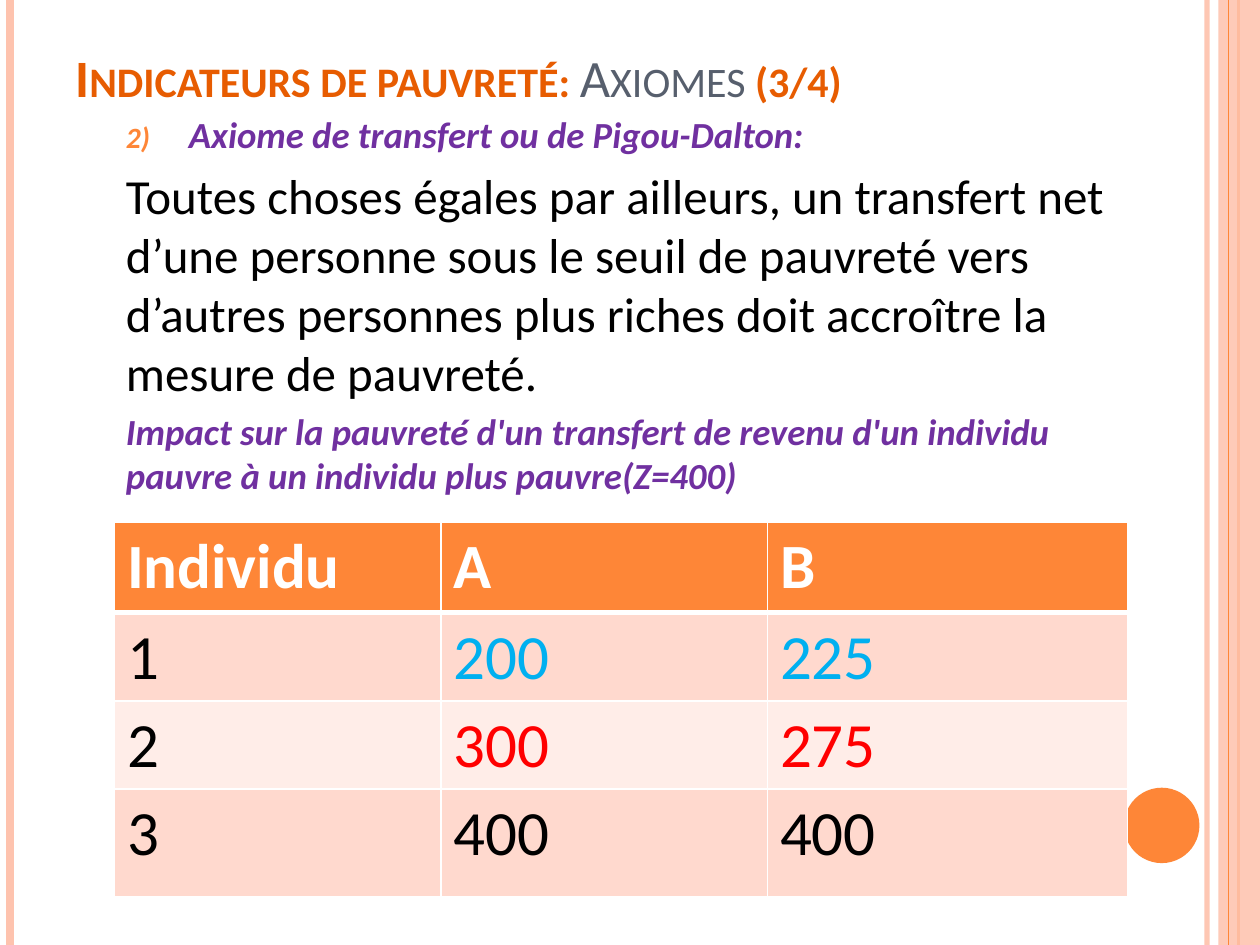
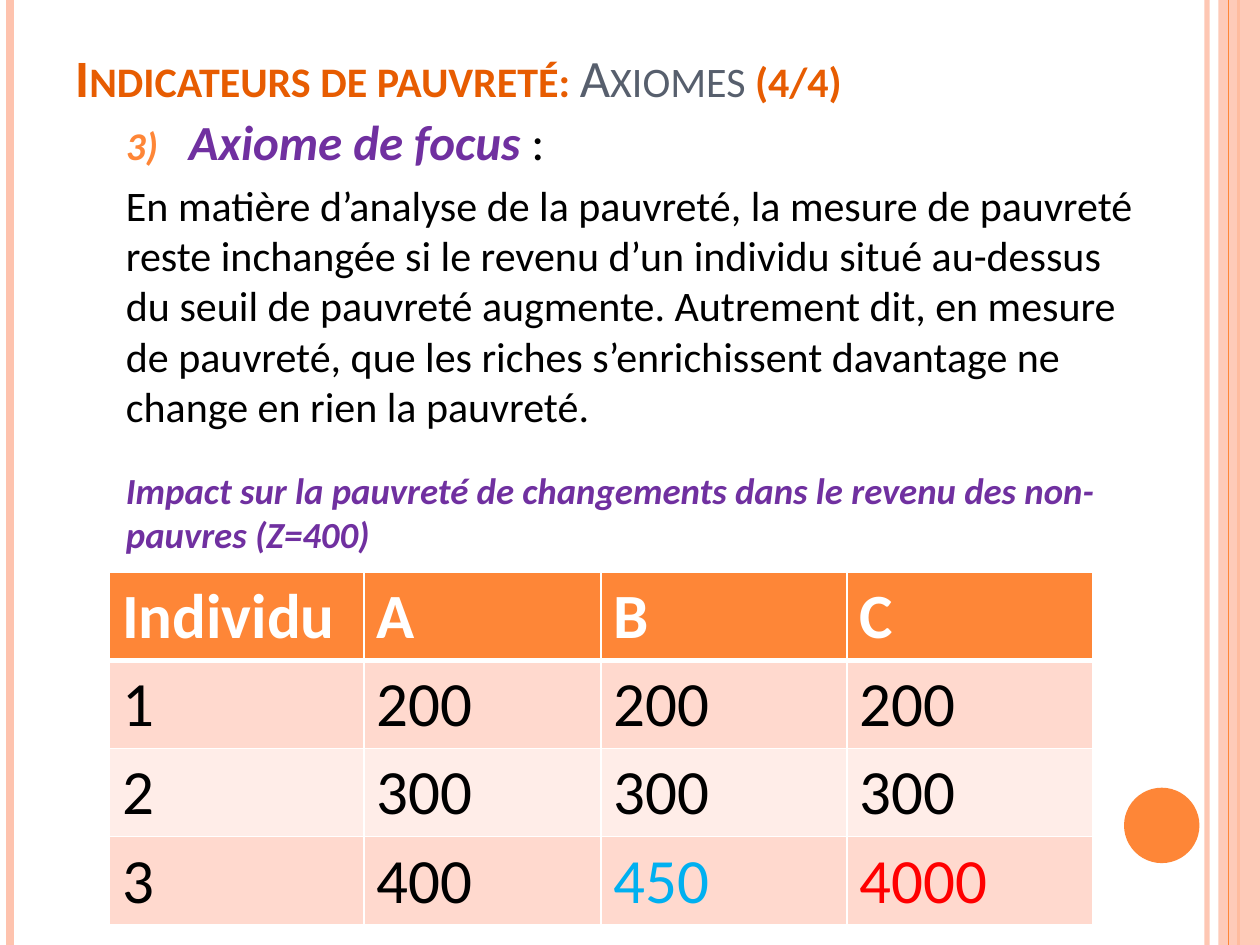
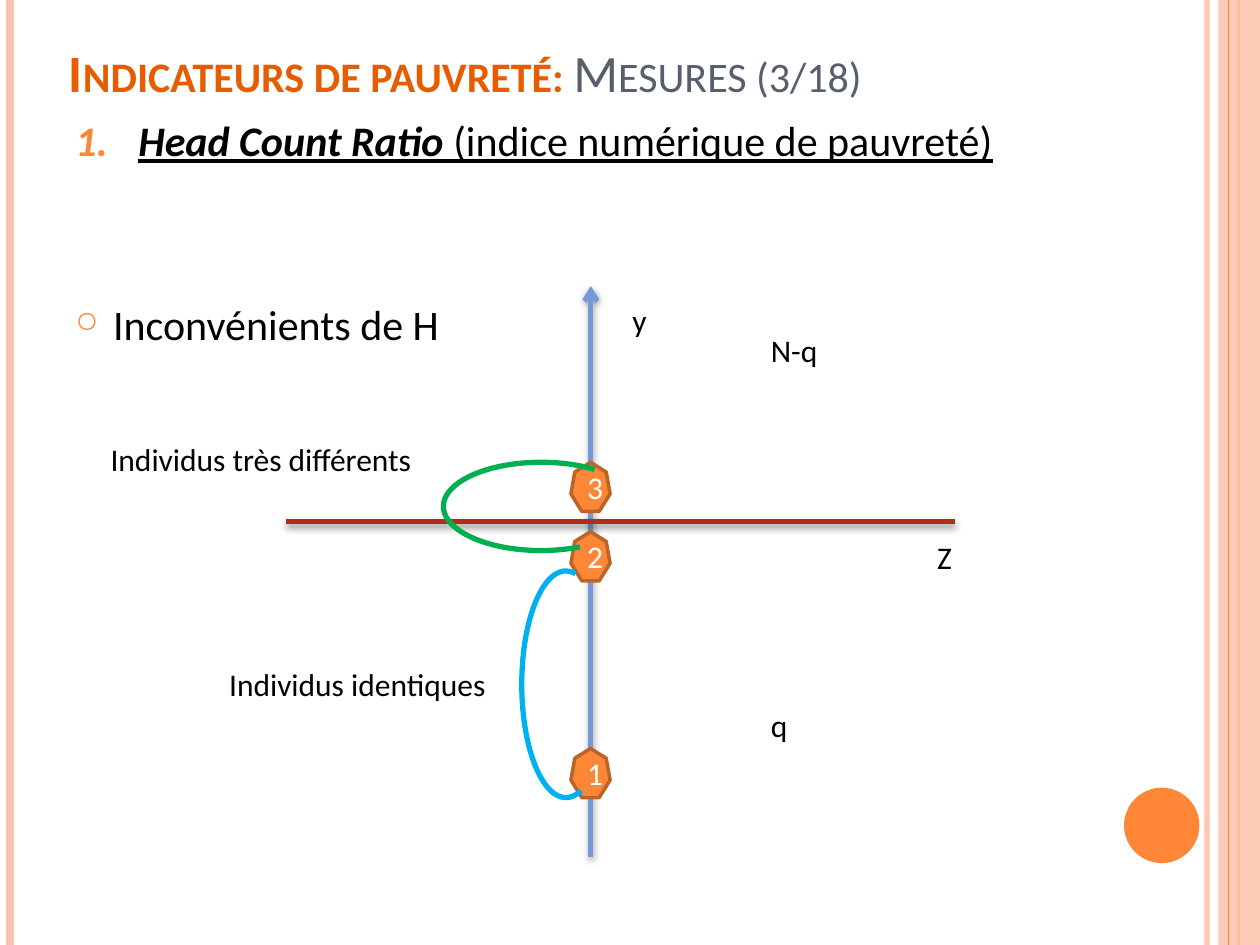
from pptx import Presentation as Deck
from pptx.util import Cm, Pt
from pptx.dml.color import RGBColor as Rgb
from pptx.enum.shapes import MSO_SHAPE as Kind, MSO_CONNECTOR as Link
from pptx.enum.text import MSO_ANCHOR as Anchor, PP_ALIGN as Align
from pptx.oxml.ns import qn
from lxml.etree import SubElement as Sub

WIDE, HIGH = 25.4, 19.05
FONT = "Calibri"
ORANGE, PEACH, RUST, SLATE = "FE8637", "FEC3AE", "E75C01", "575F6D"
PURPLE, BLUE, RED, GREEN = "7030A0", "00B0F0", "FF0000", "00B050"
BLACK, WHITE = "000000", "FFFFFF"
BANDS = ["FFD9CE", "FFEDE8"]

HEAD = dict(size=30, bold=True, color=RUST, cap="small")
SOFT = dict(HEAD, bold=False, color=SLATE)
PLAIN = dict(size=24, color=BLACK)
STRONG = dict(size=21, bold=True, italic=True, color=PURPLE)
LABEL = dict(size=18, color=BLACK)
CELL = dict(size=36, color=BLACK)

STRIPES = [(24.33, 3, PEACH, 93), (0.2, 4.5, PEACH, 100),
           (24.97, 1.5, ORANGE, 100), (24.77, 0.75, ORANGE, 100)]
LEAD = "Indicateurs de pauvreté: "
TITLE, BODY = (1.27, 0.76, 20.75, 1.55), (1.27, 2.13, 22.23, 15.85)
ITEM, INSET = (2.29, -1.27), (1.02, 0)


def number(kind, start, size):
    return dict(tag="a:buAutoNum", size=size, type=kind, startAt=str(start))


AXIOMS = [
    dict(
        page="(3/4)",
        body=[
            ([("Axiome de transfert ou de Pigou-Dalton:", STRONG)],
             ITEM, 0, number("arabicParenR", 2, 80)),
            ([("Toutes choses égales par ailleurs, un transfert net d’une personne "
               "sous le seuil de pauvreté vers d’autres personnes plus riches doit "
               "accroître la mesure de pauvreté.", dict(PLAIN, size=28))],
             INSET, 5.6, None),
            ([("Impact sur la pauvreté d'un transfert de revenu d'un individu "
               "pauvre à un individu plus pauvre(Z=400)", STRONG)],
             INSET, 4.2, None)],
        spot=(2.31, 10.52), cols=[6.58, 6.58, 7.26], rows=[1.83, 1.7, 1.75, 2.16],
        cells=[["Individu", "A", "B"], ["1", "200", "225"],
               ["2", "300", "275"], ["3", "400", "400"]],
        tints={(1, 1): BLUE, (1, 2): BLUE, (2, 1): RED, (2, 2): RED}),
    dict(
        page="(4/4)",
        body=[
            ([("Axiome de focus ", dict(STRONG, size=28)),
              (":", dict(PLAIN, size=28))],
             ITEM, 0, number("arabicParenR", 3, 80)),
            ([("En matière d’analyse de la pauvreté, la mesure de pauvreté reste "
               "inchangée si le revenu d’un individu situé au-dessus du seuil de "
               "pauvreté augmente. Autrement dit, en mesure de pauvreté, que les "
               "riches s’enrichissent davantage ne change en rien la pauvreté.",
               PLAIN)], INSET, 4.8, None),
            ([("Impact sur la pauvreté de changements dans le revenu des "
               "non-pauvres (Z=400)", STRONG)], INSET, 21, None)],
        spot=(2.21, 11.53), cols=[5.13, 4.78, 4.95, 4.95],
        rows=[1.52, 1.7, 1.57, 1.47],
        cells=[["Individu", "A", "B", "C"], ["1", "200", "200", "200"],
               ["2", "300", "300", "300"], ["3", "400", "450", "4000"]],
        tints={(3, 2): BLUE, (3, 3): RED}),
]

RATIO = [
    ([("Head Count Ratio ", dict(PLAIN, bold=True, italic=True, underline=True)),
      ("(indice numérique de pauvreté)", dict(PLAIN, underline=True))],
     (1.27, -1.27), 0, number("arabicPeriod", 1, 100)),
    ([("Inconvénients de H", PLAIN)], (0.76, -0.76), 76.5,
     dict(tag="a:buChar", size=70, char="○")),
]
AXES = [((11.91, 17.27, 11.91, 5.77), "7598D9", True),
        ((5.77, 10.52, 19.25, 10.52), "B32C16", False)]
LABELS = [("y", 12.5, 5.94, 1.19), ("q", 15.29, 14.1, 1.6),
          ("Z", 18.64, 10.72, 1.19), ("N-q", 15.29, 6.55, 1.6),
          ("Individus identiques", 4.37, 13.28, 6.15),
          ("Individus très différents", 1.98, 8.74, 7.14)]
PEOPLE = [("1", 15.09), ("2", 10.72), ("3", 9.32)]
ARCS = [((8.94, 9.32, 3.94, 1.78), (27.76, 195.25), GREEN),
        ((10.52, 11.51, 1.78, 4.57), (49.08, 164.97), BLUE)]


def rgb(code):
    return Rgb.from_string(code)


def cms(nums):
    return [Cm(num) for num in nums]


def fade(node, share):
    if share < 100:
        for tone in node.iter(qn("a:srgbClr")):
            Sub(tone, qn("a:alpha"), val=str(share * 1000))


def write(para, text, form):
    run = para.add_run()
    run.text = text
    run.font.name = FONT
    for key, val in form.items():
        if key == "color":
            run.font.color.rgb = rgb(val)
        elif key == "cap":
            run.font._element.set("cap", val)
        else:
            setattr(run.font, key, Pt(val) if key == "size" else val)


def bullet(para, mark):
    props = para._p.get_or_add_pPr()
    tone = Sub(props, qn("a:buClr"))
    Sub(tone, qn("a:srgbClr"), val=ORANGE)
    Sub(props, qn("a:buSzPct"), val=str(mark["size"] * 1000))
    Sub(props, qn(mark["tag"]),
        {key: val for key, val in mark.items() if key not in ("tag", "size")})


def box(slide, place, anchor=Anchor.TOP):
    frame = slide.shapes.add_textbox(*cms(place)).text_frame
    frame.word_wrap = True
    frame.vertical_anchor = anchor
    return frame


def title(slide, parts, place=TITLE):
    para = box(slide, place, Anchor.BOTTOM).paragraphs[0]
    for text, form in parts:
        write(para, text, form)


def body(slide, paras, place=BODY):
    frame = box(slide, place)
    for num, (runs, (left, hang), gap, mark) in enumerate(paras):
        para = frame.add_paragraph() if num else frame.paragraphs[0]
        props = para._p.get_or_add_pPr()
        props.set("marL", str(Cm(left)))
        props.set("indent", str(Cm(hang)))
        para.space_before = Pt(gap)
        if mark:
            bullet(para, mark)
        for text, form in runs:
            write(para, text, form)


def shape(slide, kind, place, fill=None, line=None, width=1):
    item = slide.shapes.add_shape(kind, *cms(place))
    item.shadow.inherit = False
    for part, code in ((item.fill, fill), (item.line.fill, line)):
        if code:
            part.solid()
            part.fore_color.rgb = rgb(code)
        else:
            part.background()
    if line:
        item.line.width = Pt(width)
    return item


def rule(slide, ends, code, width, share=100):
    item = slide.shapes.add_connector(Link.STRAIGHT, *cms(ends))
    item.line.color.rgb = rgb(code)
    item.line.width = Pt(width)
    fade(item._element, share)
    return item, Sub(item._element.spPr, qn("a:effectLst"))


def page(deck):
    slide = deck.slides.add_slide(deck.slide_layouts[6])
    for num, (left, width, code, share) in enumerate(STRIPES):
        if num == 3:
            band = shape(slide, Kind.RECTANGLE, (24.56, 0, 0.84, HIGH), PEACH)
            fade(band._element.spPr, 87)
        rule(slide, (left, 0, left, HIGH), code, width, share)
    shape(slide, Kind.OVAL, (22.66, 15.88, 1.52, 1.52), ORANGE)
    return slide


def edge(cell, row):
    props = cell._tc.get_or_add_tcPr()
    wide = {"lnT": row == 1, "lnB": row == 0}
    for side in ("lnL", "lnR", "lnT", "lnB"):
        line = Sub(props, qn("a:" + side), w=str(Pt(3 if wide.get(side) else 1)))
        Sub(Sub(line, qn("a:solidFill")), qn("a:srgbClr"), val=WHITE)


def grid(slide, spot, cols, rows, cells, tints):
    size = sum(cols), sum(rows)
    table = slide.shapes.add_table(len(rows), len(cols), *cms(spot + size)).table
    table.horz_banding = False
    for col, width in zip(table.columns, cols):
        col.width = Cm(width)
    for row, height in enumerate(rows):
        table.rows[row].height = Cm(height)
        for col, text in enumerate(cells[row]):
            cell = table.cell(row, col)
            edge(cell, row)
            cell.fill.solid()
            cell.fill.fore_color.rgb = rgb(BANDS[(row - 1) % 2] if row else ORANGE)
            tint = tints.get((row, col), BLACK) if row else WHITE
            write(cell.text_frame.paragraphs[0], text,
                  dict(CELL, bold=row == 0, color=tint))


def axis(slide, ends, code, tip):
    item, glow = rule(slide, ends, code, 2.75)
    cast = Sub(glow, qn("a:outerShdw"), blurRad=str(Pt(4)), dist=str(Pt(1.6)),
               dir="5400000", rotWithShape="0")
    Sub(cast, qn("a:srgbClr"), val=BLACK)
    fade(cast, 42)
    if tip:
        Sub(item.line._get_or_add_ln(), qn("a:tailEnd"), type="arrow")


def graph(slide):
    for ends, code, tip in AXES:
        axis(slide, ends, code, tip)
    for text, left, top, width in LABELS:
        write(box(slide, (left, top, width, 1.02)).paragraphs[0], text, LABEL)
    for text, top in PEOPLE:
        item = shape(slide, Kind.HEPTAGON, (11.51, top, 0.79, 0.99),
                     ORANGE, "BC6329", 2)
        item.text_frame.vertical_anchor = Anchor.MIDDLE
        para = item.text_frame.paragraphs[0]
        para.alignment = Align.CENTER
        write(para, text, dict(LABEL, color=WHITE))
    for place, turns, code in ARCS:
        item = shape(slide, Kind.ARC, place, None, code, 3)
        for num, turn in enumerate(turns):
            item.adjustments[num] = turn


def main():
    deck = Deck()
    deck.slide_width, deck.slide_height = Cm(WIDE), Cm(HIGH)
    for part in AXIOMS:
        slide = page(deck)
        title(slide, [(LEAD, HEAD), ("Axiomes ", SOFT), (part["page"], HEAD)])
        body(slide, part["body"])
        grid(slide, *(part[key] for key in ("spot", "cols", "rows", "cells", "tints")))
    slide = page(deck)
    title(slide, [(LEAD, HEAD), ("Mesures (3/18)", SOFT)], (1.14, 0.51, 21.56, 1.7))
    body(slide, RATIO, (1.27, 2.18, 20.75, 16.54))
    graph(slide)
    deck.save("out.pptx")


if __name__ == "__main__":
    main()
